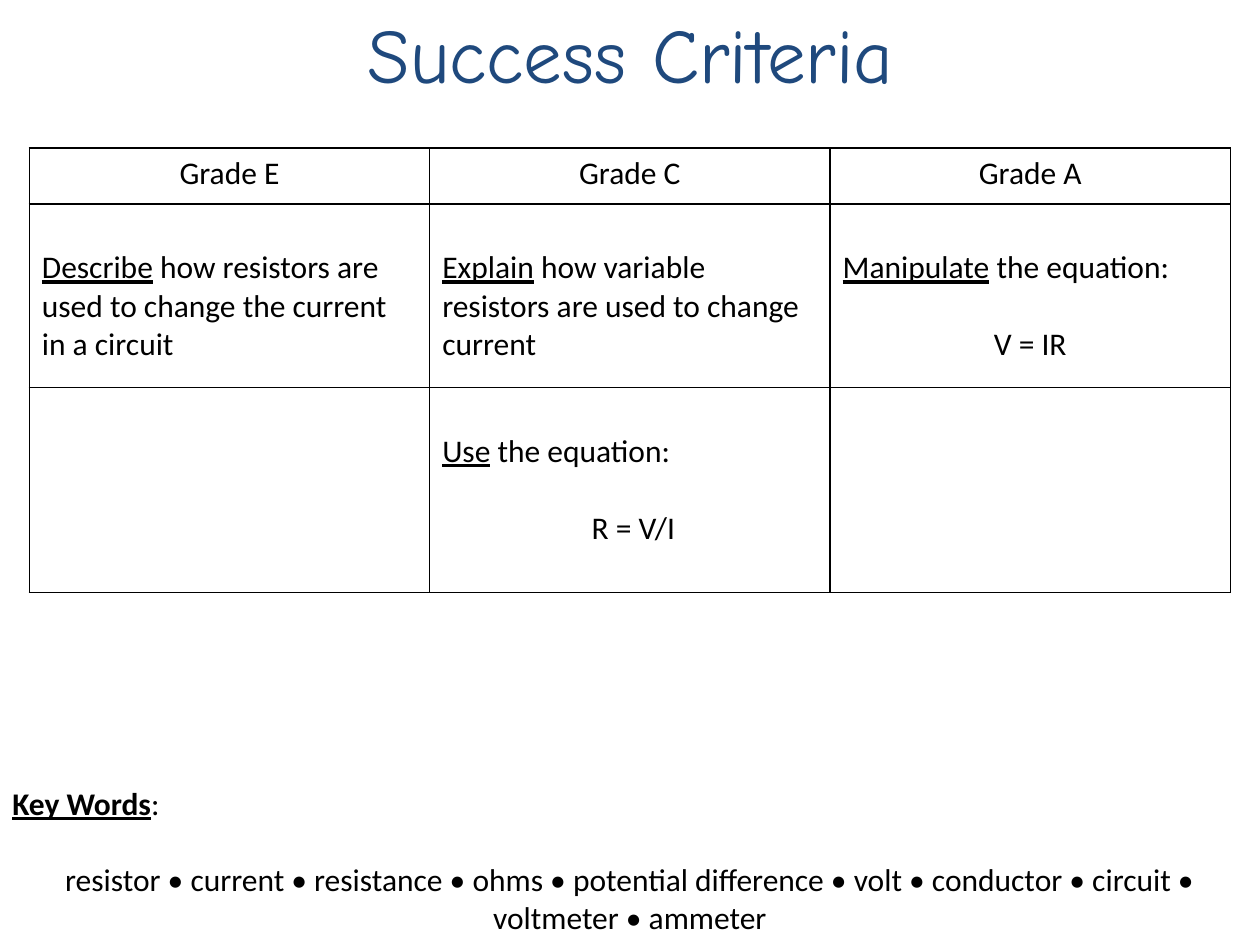
from lxml import etree
from pptx import Presentation
from pptx.dml.color import RGBColor
from pptx.enum import text
from pptx.oxml import parse_xml
from pptx.oxml.ns import nsdecls, qn
from pptx.util import Pt

BLACK = RGBColor(0, 0, 0)
NAVY = RGBColor(0x1F, 0x49, 0x7D)
LINE = 22  # height of one 18 pt line
CENTER = text.PP_ALIGN.CENTER

HEADS = ["Grade E", "Grade C", "Grade A"]
# Each criterion: command word, rest of the sentence, optional equation
CRITERIA = [
    [("Describe", " how resistors are used to change the current in a circuit", None),
     ("Explain", " how variable resistors are used to change current", None),
     ("Manipulate", " the equation:", "V = IR")],
    [None, ("Use", " the equation:", " R = V/I"), None],
]
KEY_WORDS = ["resistor", "current", "resistance", "ohms", "potential difference",
             "volt", "conductor", "circuit", "voltmeter", "ammeter"]


def add_run(p, words, size=18, font="Calibri", color=BLACK, bold=False, underline=False):
    r = p.add_run()
    r.text = words
    r.font.size, r.font.name = Pt(size), font
    r.font.bold, r.font.underline = bold, underline
    r.font.color.rgb = color


def add_centered(tf, words):
    """Add a centred paragraph one blank line below the previous one."""
    p = tf.add_paragraph()
    p.alignment = CENTER
    p.space_before = Pt(LINE)
    add_run(p, words)


def add_box(s, x, y, w, h):
    tf = s.shapes.add_textbox(Pt(x), Pt(y), Pt(w), Pt(h)).text_frame
    tf.word_wrap = True
    return tf


def set_borders(cell):
    tcPr = cell._tc.get_or_add_tcPr()
    for i, side in enumerate(("lnL", "lnR", "lnT", "lnB")):
        ln = parse_xml(f'<a:{side} {nsdecls("a")} w="12700"/>')
        fill = etree.SubElement(ln, qn("a:solidFill"))
        etree.SubElement(fill, qn("a:srgbClr")).set("val", str(BLACK))
        tcPr.insert(i, ln)


def add_title(s, x, y, w, h):
    p = add_box(s, x, y, w, h).paragraphs[0]
    p.alignment = CENTER
    add_run(p, "Success Criteria", size=44, font="Comic Neue", color=NAVY)


def add_criteria(s, x, y, w, heights):
    rows, cols = len(heights), len(HEADS)
    table = s.shapes.add_table(rows, cols, Pt(x), Pt(y), Pt(w), Pt(sum(heights))).table
    table.first_row = table.horz_banding = False
    for col in table.columns:
        col.width = Pt(w / cols)
    for row, height in zip(table.rows, heights):
        row.height = Pt(height)
    for cell in table.iter_cells():
        cell.fill.background()
        set_borders(cell)

    # Grade headings
    for c, head in enumerate(HEADS):
        p = table.cell(0, c).text_frame.paragraphs[0]
        p.alignment = CENTER
        add_run(p, head)

    # Criteria, one line below the top of each cell
    for r, line in enumerate(CRITERIA, 1):
        for c, item in enumerate(line):
            if item is None:
                continue
            verb, rest, equation = item
            cell = table.cell(r, c)
            cell.margin_top = Pt(3.6 + LINE)
            tf = cell.text_frame
            add_run(tf.paragraphs[0], verb, underline=True)
            add_run(tf.paragraphs[0], rest)
            if equation:
                add_centered(tf, equation)


def add_key_words(s, x, y, w, h):
    tf = add_box(s, x, y, w, h)
    add_run(tf.paragraphs[0], "Key Words", bold=True, underline=True)
    add_run(tf.paragraphs[0], ":")
    add_centered(tf, " • ".join(KEY_WORDS))


def main():
    prs = Presentation()
    prs.slide_width, prs.slide_height = Pt(720), Pt(540)
    s = prs.slides.add_slide(prs.slide_layouts[6])
    add_title(s, 36.5, 0, 648, 90)
    add_criteria(s, 16.75, 84.5, 686.4, [32, 105, 117])
    add_key_words(s, 0, 444.25, 720, 94.5)
    prs.save("out.pptx")


if __name__ == "__main__":
    main()
